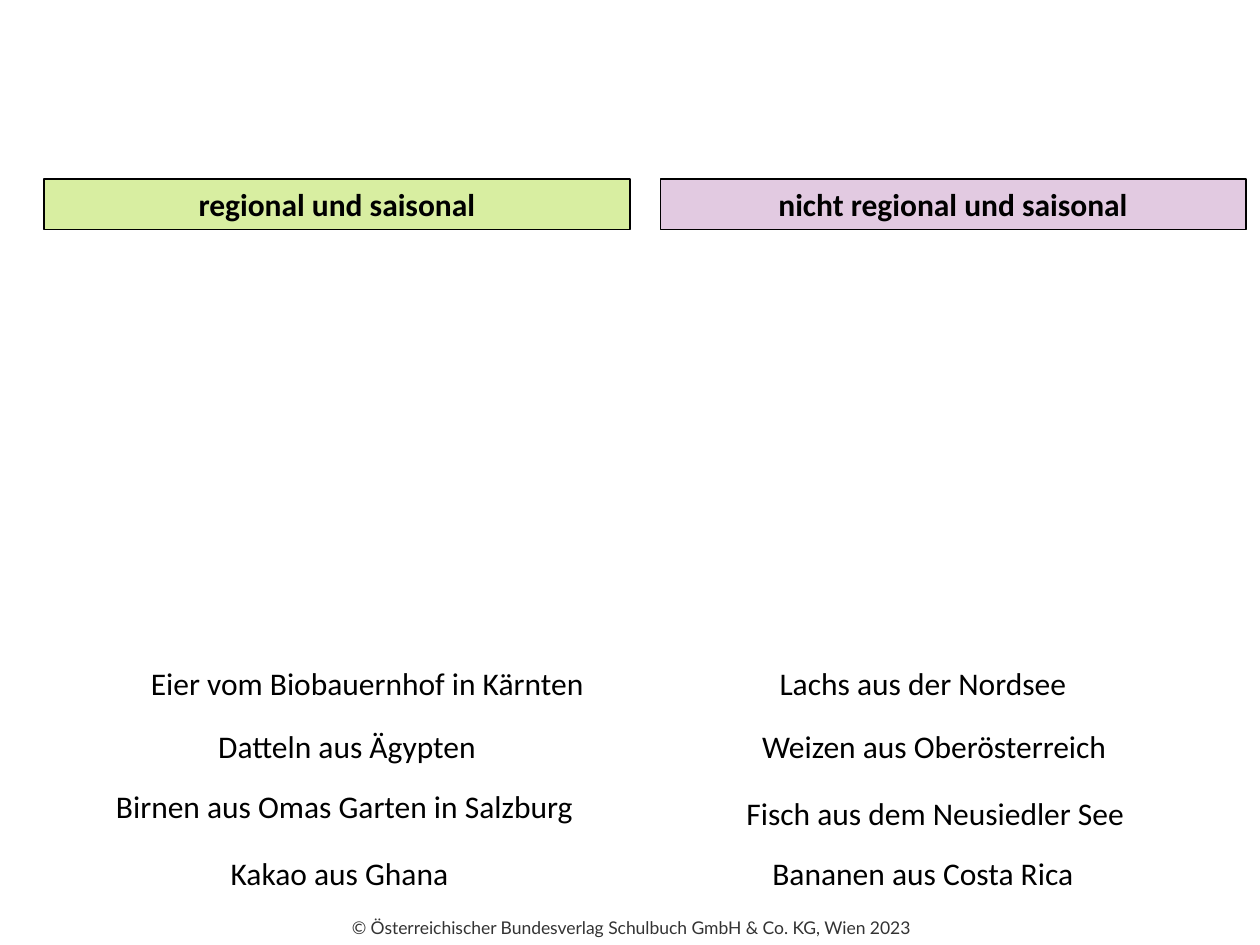
from pptx import Presentation
from pptx import util as u
from pptx.dml.color import RGBColor
from pptx.enum import shapes, text

BLACK = RGBColor(0x00, 0x00, 0x00)
GREY = RGBColor(0x33, 0x33, 0x33)
GREEN = RGBColor(0xD8, 0xEE, 0xA1)
LILAC = RGBColor(0xE2, 0xCA, 0xE1)

BOX_W, BOX_H = 11.81, 1.02


class SortingSlide:
    font = "Calibri"
    size = 18

    def __init__(self, prs):
        self.s = prs.slides.add_slide(prs.slide_layouts[6])

    def set_text(self, sp, words, bold=False, font=None, size=None, color=BLACK):
        tf = sp.text_frame
        tf.word_wrap = True
        tf.vertical_anchor = text.MSO_ANCHOR.TOP
        tf.text = words
        p = tf.paragraphs[0]
        p.alignment = text.PP_ALIGN.CENTER
        r = p.runs[0]
        r.font.name = font or self.font
        r.font.size = u.Pt(size or self.size)
        r.font.bold = bold
        r.font.color.rgb = color

    def heading(self, words, left, top, fill):
        sp = self.s.shapes.add_shape(shapes.MSO_SHAPE.RECTANGLE, u.Cm(left), u.Cm(top),
                                     u.Cm(BOX_W), u.Cm(BOX_H))
        sp.shadow.inherit = False
        sp.fill.solid()
        sp.fill.fore_color.rgb = fill
        sp.line.color.rgb = BLACK
        sp.line.width = u.Pt(0.75)
        self.set_text(sp, words, bold=True)

    def label(self, words, left, top, width=BOX_W, height=BOX_H, **style):
        sp = self.s.shapes.add_textbox(u.Cm(left), u.Cm(top), u.Cm(width), u.Cm(height))
        self.set_text(sp, words, **style)


def main():
    prs = Presentation()
    prs.slide_width, prs.slide_height = u.Cm(25.4), u.Cm(19.05)
    slide = SortingSlide(prs)

    # Copyright line
    slide.label("© Österreichischer Bundesverlag Schulbuch GmbH & Co. KG, Wien 2023",
                0.02, 18.37, 25.4, 0.68, font="Lato", size=10, color=GREY)

    # Column headings
    slide.heading("regional und saisonal", 0.89, 3.61, GREEN)
    slide.heading("nicht regional und saisonal", 13.31, 3.61, LILAC)

    # Foods to sort, loosely scattered in two columns
    foods = [
        ("Eier vom Biobauernhof in Kärnten", 1.5, 13.26),
        ("Datteln aus Ägypten", 1.09, 14.53),
        ("Birnen aus Omas Garten in Salzburg", 1.04, 15.75),
        ("Kakao aus Ghana", 0.94, 17.09),
        ("Lachs aus der Nordsee", 12.7, 13.26),
        ("Weizen aus Oberösterreich", 12.93, 14.53),
        ("Fisch aus dem Neusiedler See", 12.95, 15.88),
        ("Bananen aus Costa Rica", 12.7, 17.09),
    ]
    for words, left, top in foods:
        slide.label(words, left, top)

    prs.save("out.pptx")


if __name__ == "__main__":
    main()
